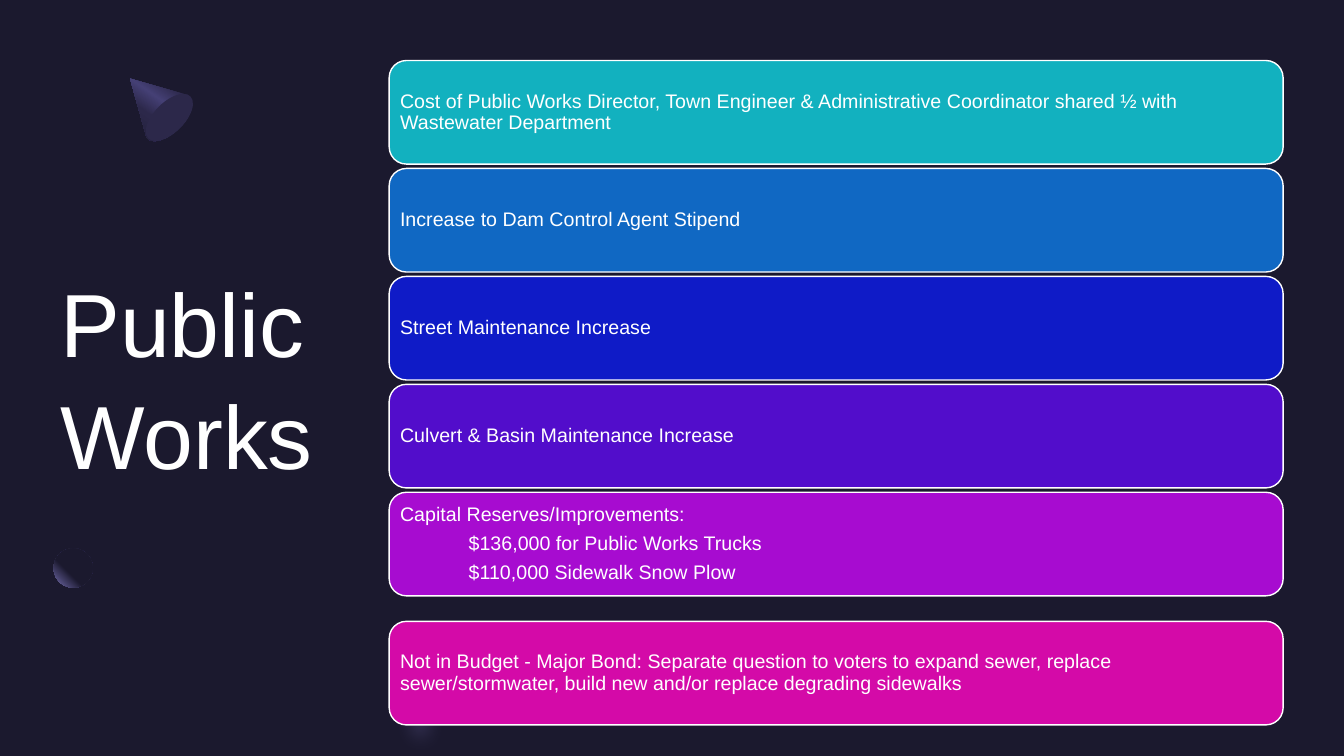
from dataclasses import dataclass
from math import cos, radians, sin

from pptx import Presentation
from pptx.dml.color import RGBColor
from pptx.enum.shapes import MSO_SHAPE as Preset
from pptx.enum.text import MSO_ANCHOR as Anchor, MSO_AUTO_SIZE as AutoSize, PP_ALIGN as Align
from pptx.oxml import parse_xml
from pptx.oxml.ns import nsdecls, qn
from pptx.util import Pt


@dataclass(frozen=True)
class Theme:
    font: str = "Arial"
    title_size: float = 64
    card_size: float = 14
    night: str = "1B192E"
    dusk: str = "2C284A"
    violet: str = "454075"
    lilac: str = "7771B2"
    white: str = "FFFFFF"
    cards: tuple = ("12B1BF", "1068C3", "0F1BC7", "520DCB", "A70CD0", "D40AA8")


THEME = Theme()

MEASURES = [
    ["Cost of Public Works Director, Town Engineer & Administrative Coordinator "
     "shared ½ with Wastewater Department"],
    ["Increase to Dam Control Agent Stipend"],
    ["Street Maintenance Increase"],
    ["Culvert & Basin Maintenance Increase"],
    ["Capital Reserves/Improvements:",
     "$136,000 for Public Works Trucks",
     "$110,000 Sidewalk Snow Plow"],
    ["Not in Budget - Major Bond: Separate question to voters to expand sewer, "
     "replace sewer/stormwater, build new and/or replace degrading sidewalks"],
]

CONE = [
    (92.9, 56.2), (133.2, 67.7), (133.9, 67.7),
    (134.6, 68.4, 135.4, 68.4, 135.4, 69.1),
    (139.7, 73.4, 136.1, 83.5, 128.2, 91.4),
    (119.5, 100.1, 109.4, 103, 105.8, 99.4),
    (105.1, 98.6, 104.4, 97.9, 104.4, 97.2),
]
ARC = [
    (345.6, 447.1), (367.9, 445.7, 391, 455, 409, 473), (383.8, 499),
    (367.2, 482.4, 342.7, 481, 328.3, 495.4),
    (318.2, 506.2, 316.1, 522.7, 322.6, 537.1),
    (324, 540), (283.7, 540), (282.2, 535),
    (276.5, 509.8, 281.5, 483.8, 299.5, 466.6),
    (311.8, 453.6, 328.3, 447.1, 345.6, 447.1),
]


def apply(target, formats):
    for name, value in formats.items():
        setattr(target, name, value)


def style_font(font, size):
    apply(font, {"name": THEME.font, "size": Pt(size)})
    font.color.rgb = RGBColor.from_string(THEME.white)


def paint(shape, color):
    shape.fill.solid()
    shape.fill.fore_color.rgb = RGBColor.from_string(color)


def paint_gradient(shape, stops, direction):
    shape.fill.background()
    marks = "".join(
        f'<a:gs pos="{position * 1000}"><a:srgbClr val="{color}"/></a:gs>'
        for position, color in stops)
    gradient = parse_xml(
        f'<a:gradFill {nsdecls("a")} rotWithShape="1">'
        f'<a:gsLst>{marks}</a:gsLst>{direction}</a:gradFill>')
    properties = shape.element.spPr
    properties.replace(properties.find(qn("a:noFill")), gradient)


def add_preset(slide, preset, box):
    shape = slide.shapes.add_shape(preset, *map(Pt, box))
    shape.shadow.inherit = False
    shape.line.fill.background()
    return shape


def flatten(outline, steps=10):
    points = [outline[0]]
    for part in outline[1:]:
        if len(part) == 2:
            points.append(part)
            continue
        knots = [points[-1], part[:2], part[2:4], part[4:]]
        for step in range(1, steps + 1):
            t = step / steps
            weights = ((1 - t) ** 3, 3 * t * (1 - t) ** 2, 3 * t * t * (1 - t), t ** 3)
            points.append(tuple(
                sum(w * knot[axis] for w, knot in zip(weights, knots)) for axis in (0, 1)))
    return points


def add_tilted_outline(slide, outline, center, rotation):
    cx, cy = center
    turn = radians(-rotation)
    upright = [
        (Pt(cx + (x - cx) * cos(turn) - (y - cy) * sin(turn)),
         Pt(cy + (x - cx) * sin(turn) + (y - cy) * cos(turn)))
        for x, y in flatten(outline)]
    builder = slide.shapes.build_freeform(*upright[0])
    builder.add_line_segments(upright[1:], close=True)
    shape = builder.convert_to_shape()
    shape.rotation = rotation
    shape.shadow.inherit = False
    shape.line.fill.background()
    return shape


def add_title(slide, box):
    title = slide.shapes.title
    apply(title, dict(zip(("left", "top", "width", "height"), map(Pt, box))))
    frame = title.text_frame
    frame.text = "Public Works"
    apply(frame, {"word_wrap": True, "auto_size": AutoSize.NONE,
                  "vertical_anchor": Anchor.MIDDLE, "margin_left": 0,
                  "margin_right": 0, "margin_top": 0, "margin_bottom": 0})
    heading = frame.paragraphs[0]
    apply(heading, {"alignment": Align.LEFT, "line_spacing": 1.04})
    style_font(heading.runs[0].font, THEME.title_size)


def add_cone(slide, box):
    left, top, width, height = box
    body = add_tilted_outline(slide, CONE, (left + width / 2, top + height / 2), 315)
    paint_gradient(body, [(30, THEME.dusk), (45, THEME.violet),
                          (60, THEME.dusk), (100, THEME.night)],
                   '<a:lin ang="10200000" scaled="0"/>')
    base = add_preset(slide, Preset.OVAL, (left + 20.9, top + 13.7, 21.6, 42.5))
    base.rotation = 45
    paint(base, THEME.dusk)


def add_sphere(slide, box):
    sphere = add_preset(slide, Preset.OVAL, box)
    paint_gradient(sphere, [(60, THEME.night), (100, THEME.lilac)],
                   '<a:path path="circle"><a:fillToRect l="100000" b="100000"/></a:path>')


def add_glow(slide, box):
    left, top, width, height = box
    glow = add_tilted_outline(slide, ARC, (left + width / 2, top + height / 2), 315)
    paint(glow, THEME.lilac)
    properties = glow.element.spPr
    tint = properties.find(qn("a:solidFill")).find(qn("a:srgbClr"))
    tint.append(parse_xml(f'<a:alpha {nsdecls("a")} val="40000"/>'))
    properties.find(qn("a:effectLst")).append(
        parse_xml(f'<a:softEdge {nsdecls("a")} rad="{Pt(14)}"/>'))


def add_card(slide, box, lines, color):
    card = add_preset(slide, Preset.ROUNDED_RECTANGLE, box)
    paint(card, color)
    card.line.color.rgb = RGBColor.from_string(THEME.white)
    card.line.width = Pt(1)
    frame = card.text_frame
    apply(frame, {"word_wrap": True, "vertical_anchor": Anchor.MIDDLE,
                  "margin_left": Pt(4.2), "margin_right": Pt(4.2),
                  "margin_top": Pt(4.2), "margin_bottom": Pt(4.2)})
    frame.text = "\n".join(lines)
    for order, paragraph in enumerate(frame.paragraphs):
        apply(paragraph, {"alignment": Align.LEFT, "line_spacing": 0.9,
                          "space_after": Pt(5.5)})
        if order:
            paragraph._p.get_or_add_pPr().set("marL", str(Pt(49)))
        style_font(paragraph.runs[0].font, THEME.card_size)


def add_measures(slide, box, card_height=74, gap=3.1, bond_gap=15.1):
    left, top, width, _ = box
    last = len(MEASURES) - 1
    for row, (lines, color) in enumerate(zip(MEASURES, THEME.cards)):
        card_top = top + row * (card_height + gap) + (bond_gap if row == last else 0)
        add_card(slide, (left, card_top, width, card_height), lines, color)


def main():
    deck = Presentation()
    apply(deck, {"slide_width": Pt(960), "slide_height": Pt(540)})
    slide = deck.slides.add_slide(deck.slide_layouts[5])
    paint(slide.background, THEME.night)
    add_title(slide, (43.2, 119.5, 357.1, 297.4))
    add_cone(slide, (89.3, 49, 42.5, 49.7))
    add_sphere(slide, (38.2, 391.7, 28.1, 28.1))
    add_glow(slide, (264.2, 450.7, 136.1, 82.1))
    add_measures(slide, (278, 43.2, 638.6, 475))
    deck.save("out.pptx")


if __name__ == "__main__":
    main()
